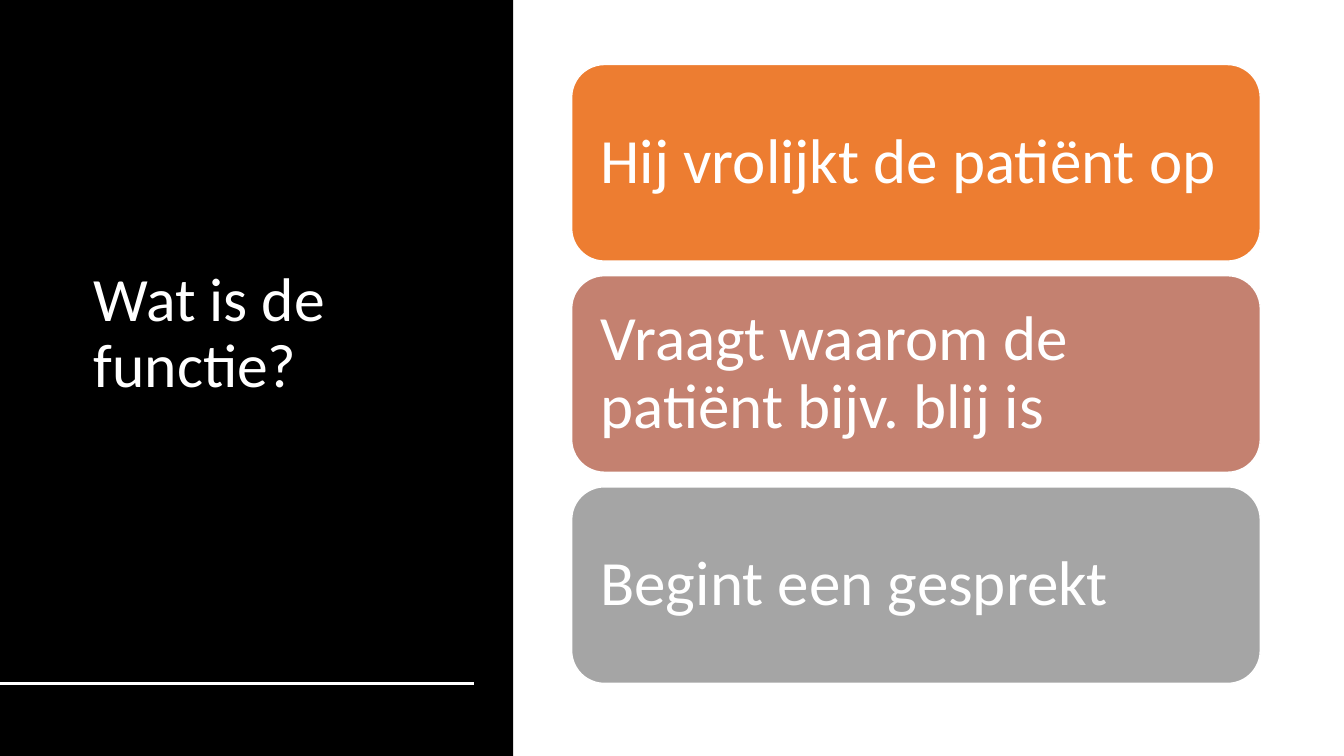
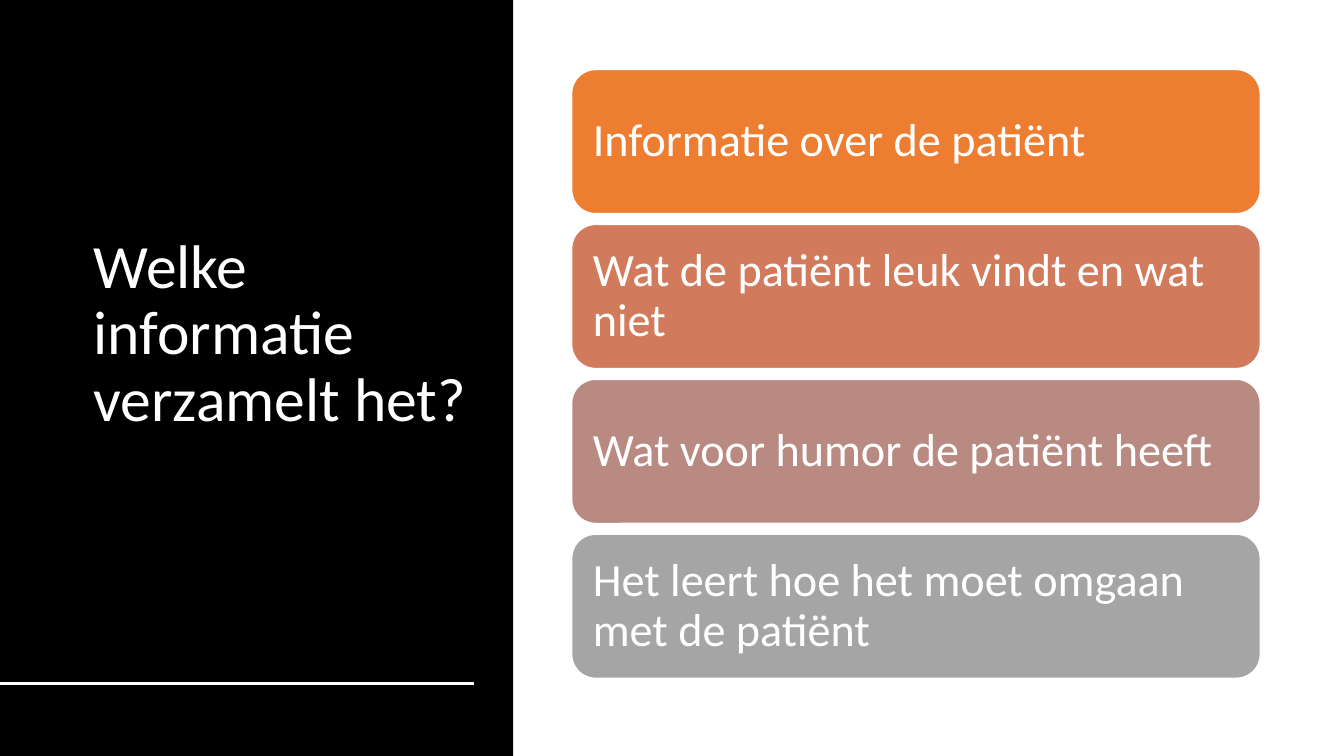
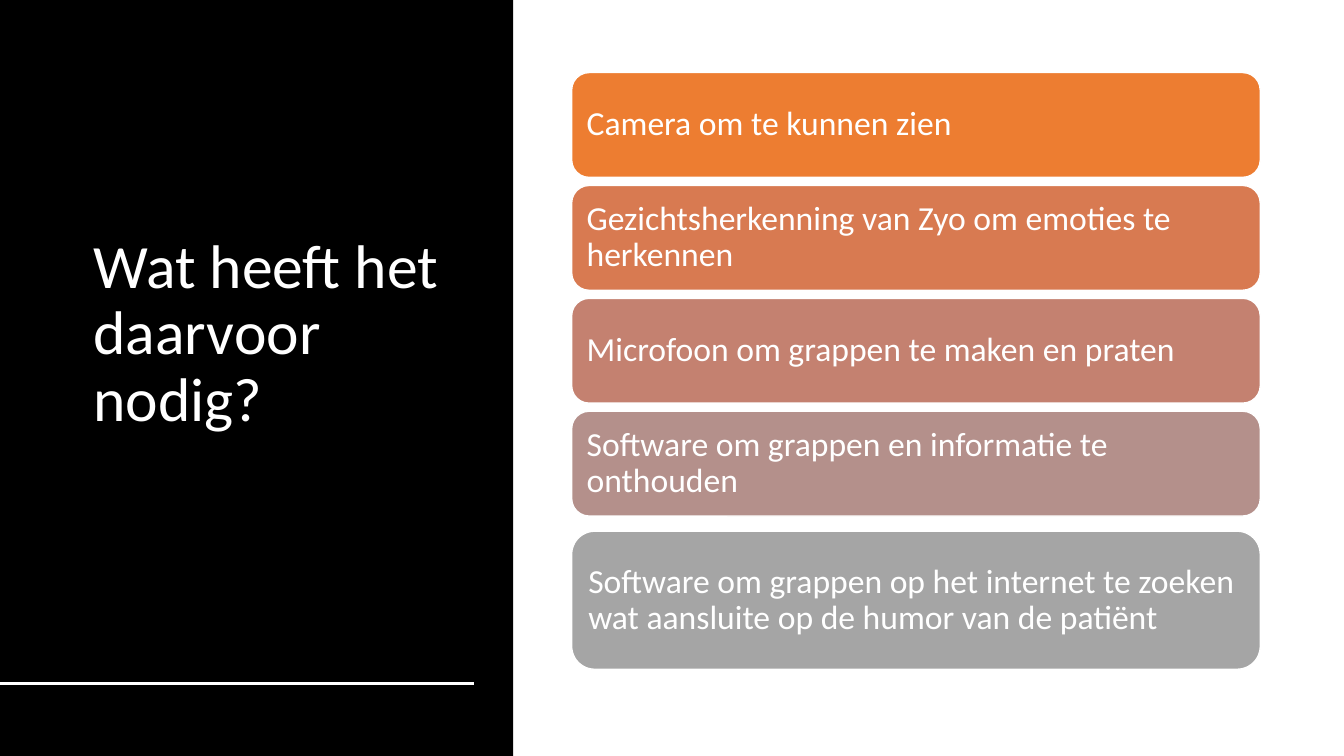
from collections import namedtuple

from lxml.etree import SubElement
from pptx import Presentation
from pptx.dml.color import RGBColor
from pptx.enum.shapes import MSO_CONNECTOR as Connector, MSO_SHAPE as Shape
from pptx.enum.text import MSO_ANCHOR as Anchor, PP_ALIGN as Align
from pptx.oxml.ns import qn
from pptx.util import Pt

EMU_PER_PX = 9144
FONT = "Calibri"
BLACK = RGBColor(0x00, 0x00, 0x00)
WHITE = RGBColor(0xFF, 0xFF, 0xFF)
ORANGE = RGBColor(0xED, 0x7D, 0x31)
COPPER = RGBColor(0xD8, 0x7A, 0x51)
TERRACOTTA = RGBColor(0xD1, 0x7B, 0x5C)
ROSE = RGBColor(0xC4, 0x81, 0x70)
MAUVE = RGBColor(0xB9, 0x8A, 0x82)
TAUPE = RGBColor(0xB4, 0x90, 0x8B)
GRAY = RGBColor(0xA5, 0xA5, 0xA5)

Box = namedtuple("Box", "left top width height")
CardStyle = namedtuple("CardStyle", "height font_size inset")

PAGE = Box(0, 0, 1333, 750)
PANEL = Box(0, 0, 509, 750)
CARDS_LEFT, CARDS_WIDTH = 567, 683
LARGE = CardStyle(195, 45, 19)
MEDIUM = CardStyle(143, 33, 14)
SMALL = CardStyle(104, 24, 10)
TALL = CardStyle(137, 24, 10)

SLIDES = [
    ("Wat is de functie?", [
        (64, 614, LARGE, [
            ("Hij vrolijkt de patiënt op", ORANGE),
            ("Vraagt waarom de patiënt bijv. blij is", ROSE),
            ("Begint een gesprekt", GRAY),
        ]),
    ]),
    ("Welke informatie verzamelt het?", [
        (69, 604, MEDIUM, [
            ("Informatie over de patiënt", ORANGE),
            ("Wat de patiënt leuk vindt en wat niet", TERRACOTTA),
            ("Wat voor humor de patiënt heeft", MAUVE),
            ("Het leert hoe het moet omgaan met de patiënt", GRAY),
        ]),
    ]),
    ("Wat heeft het daarvoor nodig?", [
        (72, 440, SMALL, [
            ("Camera om te kunnen zien", ORANGE),
            ("Gezichtsherkenning van Zyo om emoties te herkennen", COPPER),
            ("Microfoon om grappen te maken en praten", ROSE),
            ("Software om grappen en informatie te onthouden", TAUPE),
        ]),
        (527, 137, TALL, [
            ("Software om grappen op het internet te zoeken wat aansluite "
             "op de humor van de patiënt", GRAY),
        ]),
    ]),
]


def px(length):
    return round(length * EMU_PER_PX)


def emu(box):
    return [px(length) for length in box]


def write_text(shape, text, font_size):
    frame = shape.text_frame
    frame.text = text
    frame.word_wrap = True
    frame.vertical_anchor = Anchor.MIDDLE
    paragraph = frame.paragraphs[0]
    paragraph.alignment = Align.LEFT
    paragraph.line_spacing = 0.9
    font = paragraph.runs[0].font
    font.name = FONT
    font.size = Pt(font_size)
    font.color.rgb = WHITE


def add_filled(slide, kind, box, color):
    shape = slide.shapes.add_shape(kind, *emu(box))
    shape.shadow.inherit = False
    shape.fill.solid()
    shape.fill.fore_color.rgb = color
    return shape


def add_title_panel(slide, box, title):
    panel = add_filled(slide, Shape.RECTANGLE, box, BLACK)
    panel.line.fill.background()
    title_box = Box(box.left + 83, box.top + 61, box.width - 119, box.height - 208)
    write_text(slide.shapes.add_textbox(*emu(title_box)), title, 44)
    rule_top = px(box.top + box.height - 72)
    rule = slide.shapes.add_connector(
        Connector.STRAIGHT, px(box.left), rule_top, px(box.left + box.width - 39), rule_top)
    rule.line.color.rgb = WHITE
    rule.line.width = Pt(2)
    SubElement(rule._element.spPr, qn("a:effectLst"))


def add_card(slide, box, style, text, color):
    card = add_filled(slide, Shape.ROUNDED_RECTANGLE, box, color)
    card.line.color.rgb = WHITE
    card.line.width = Pt(1)
    frame = card.text_frame
    frame.margin_left = frame.margin_right = px(style.inset)
    frame.margin_top = frame.margin_bottom = px(style.inset)
    write_text(card, text, style.font_size)


def add_card_stack(slide, box, style, cards):
    pitch = (box.height - style.height) / max(len(cards) - 1, 1)
    for index, (text, color) in enumerate(cards):
        card_box = Box(box.left, box.top + index * pitch, box.width, style.height)
        add_card(slide, card_box, style, text, color)


def main():
    presentation = Presentation()
    presentation.slide_width = px(PAGE.width)
    presentation.slide_height = px(PAGE.height)
    for title, stacks in SLIDES:
        slide = presentation.slides.add_slide(presentation.slide_layouts[6])
        add_title_panel(slide, PANEL, title)
        for top, height, style, cards in stacks:
            add_card_stack(slide, Box(CARDS_LEFT, top, CARDS_WIDTH, height), style, cards)
    presentation.save("out.pptx")


if __name__ == "__main__":
    main()
